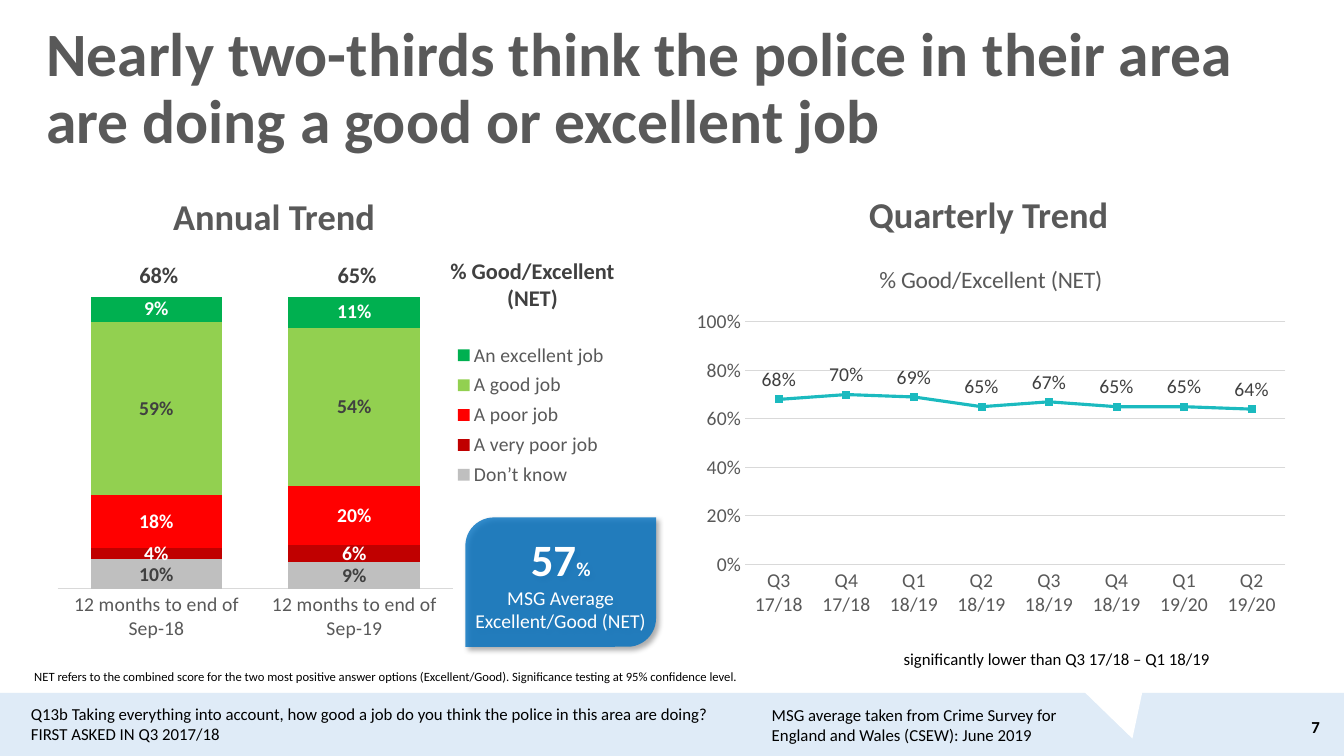
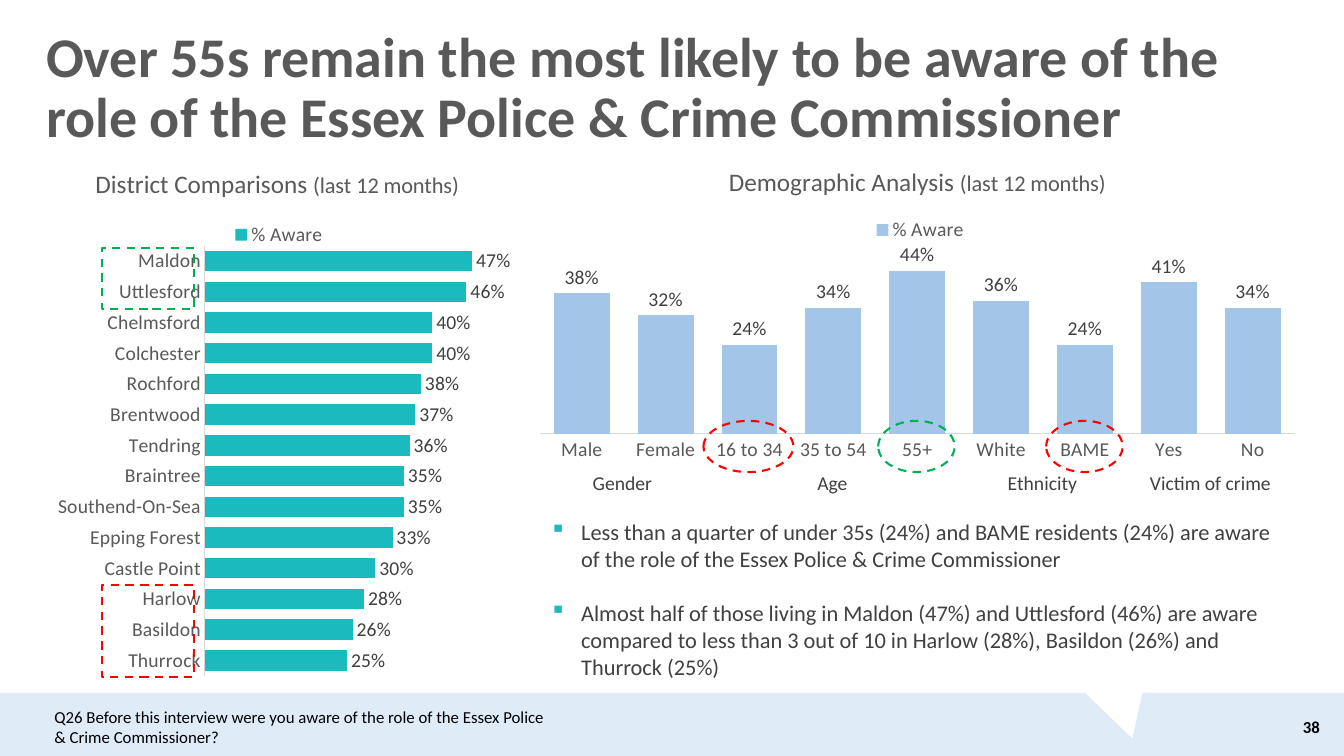
from lxml.etree import SubElement
from pptx import Presentation
from pptx.chart.data import CategoryChartData
from pptx.dml.color import RGBColor
from pptx.enum.chart import XL_CHART_TYPE as KIND
from pptx.enum.chart import XL_LABEL_POSITION as SPOT
from pptx.enum.chart import XL_LEGEND_POSITION as SIDE
from pptx.enum.chart import XL_MARKER_STYLE, XL_TICK_MARK
from pptx.enum.dml import MSO_LINE
from pptx.enum.shapes import MSO_SHAPE as FORM
from pptx.enum.text import MSO_ANCHOR, MSO_AUTO_SIZE, PP_ALIGN
from pptx.oxml.ns import qn
from pptx.util import Emu, Inches, Pt

COLS, ROWS = 160, 90
CELL = Inches(1) // 12
FACE = "Calibri"
BLACK = RGBColor(0x00, 0x00, 0x00)
WHITE = RGBColor(0xFF, 0xFF, 0xFF)
SLATE = RGBColor(0x59, 0x59, 0x59)
DARK = RGBColor(0x40, 0x40, 0x40)
RULE = RGBColor(0xD9, 0xD9, 0xD9)
SILVER = RGBColor(0xBF, 0xBF, 0xBF)
PALE = RGBColor(0xDF, 0xEB, 0xF7)
BLUE = RGBColor(0x00, 0x70, 0xC0)
SKY = RGBColor(0xA2, 0xC5, 0xE8)
TEAL = RGBColor(0x1B, 0xBA, 0xBF)
GREEN = RGBColor(0x00, 0xB0, 0x50)
LIME = RGBColor(0x92, 0xD0, 0x50)
RED = RGBColor(0xFF, 0x00, 0x00)
MAROON = RGBColor(0xC0, 0x00, 0x00)
LEFT, MID, RIGHT = PP_ALIGN.LEFT, PP_ALIGN.CENTER, PP_ALIGN.RIGHT


def grid(*cells):
    """Turn grid columns and rows into lengths."""
    return [Emu(round(n * CELL)) for n in cells]


def paint(font, size=14, color=SLATE, bold=False):
    """Set face, size, colour and weight of a font."""
    font.name, font.size, font.bold = FACE, Pt(size), bold
    font.color.rgb = color


def write(frame, *lines, align=LEFT, space=None, after=0, bullet=None, **look):
    """Fill a frame with lines, each a string or a list of (text, look) runs."""
    for n, line in enumerate(lines):
        para = frame.add_paragraph() if n else frame.paragraphs[0]
        para.alignment, para.line_spacing = align, space
        if after and n < len(lines) - 1:
            para.space_after = Pt(after)
        if bullet:
            props = para._p.get_or_add_pPr()
            props.set("marL", str(Inches(0.31)))
            props.set("indent", str(-Inches(0.31)))
            tint = SubElement(props, qn("a:buClr"))
            SubElement(tint, qn("a:srgbClr"), val=str(bullet))
            SubElement(props, qn("a:buChar"), char="▪")
        for text, extra in [(line, {})] if isinstance(line, str) else line:
            run = para.add_run()
            run.text = text
            paint(run.font, **{**look, **extra})


def label(slide, box, *lines, anchor=MSO_ANCHOR.TOP, **look):
    """Add a wrapped text box."""
    frame = slide.shapes.add_textbox(*grid(*box)).text_frame
    frame.word_wrap, frame.vertical_anchor = True, anchor
    write(frame, *lines, **look)


def shape(slide, form, box, fill=None, edge=None):
    """Add a preset shape with a plain fill or a dashed edge."""
    item = slide.shapes.add_shape(form, *grid(*box))
    item.shadow.inherit = False
    if fill is None:
        item.fill.background()
    else:
        item.fill.solid()
        item.fill.fore_color.rgb = fill
    if edge is None:
        item.line.fill.background()
    else:
        item.line.color.rgb, item.line.width = edge, Pt(1.5)
        item.line.dash_style = MSO_LINE.DASH
    return item


def base(deck):
    """Put the footer band and its notch on the title-only layout."""
    layout = deck.slide_layouts[5]
    slide = deck.slides.add_slide(layout)
    band = shape(slide, FORM.RECTANGLE, (0, 82.5, COLS, 7.5), PALE)
    notch = shape(slide, FORM.ISOSCELES_TRIANGLE, (129, 79.8, 9.2, 8.3), WHITE)
    notch.rotation = 163.1
    for n, item in enumerate((band, notch)):
        item.element.xpath("./p:nvSpPr/p:cNvPr")[0].set("id", str(20 + n))
        layout.shapes.element.insert(2 + n, item.element)
    return slide


def head(slide, text, number, box, size):
    """Format the title and add the page number."""
    title = slide.shapes.title
    title.left, title.top, title.width, title.height = grid(*box)
    frame = title.text_frame
    frame.auto_size, frame.word_wrap = MSO_AUTO_SIZE.NONE, True
    frame.vertical_anchor = MSO_ANCHOR.MIDDLE
    write(frame, text, space=0.9, size=size, bold=True)
    label(slide, (151.4, 84.1, 6.9, 4.8), number, anchor=MSO_ANCHOR.MIDDLE,
          align=RIGHT, size=12, color=BLACK, bold=True)


def table(slide, left, top, high, widths, texts, **look):
    """Add a one-row table of centred captions."""
    box = grid(left, top, sum(widths), high)
    body = slide.shapes.add_table(1, len(widths), *box).table
    body.first_row = body.horz_banding = False
    for n, (wide, text) in enumerate(zip(widths, texts)):
        body.columns[n].width = grid(wide)[0]
        cell = body.cell(0, n)
        cell.fill.background()
        cell.vertical_anchor = MSO_ANCHOR.MIDDLE
        write(cell.text_frame, text, align=MID, **look)


def place(node, spots, inner=False):
    """Give a plot area or legend a manual layout in shares of the chart."""
    for old in node.findall(qn("c:layout")):
        node.remove(old)
    layout = node.makeelement(qn("c:layout"))
    node.insert(len(node.findall(qn("c:legendPos"))), layout)
    manual = SubElement(layout, qn("c:manualLayout"))
    if inner:
        SubElement(manual, qn("c:layoutTarget"), val="inner")
    for key in "xy":
        SubElement(manual, qn(f"c:{key}Mode"), val="edge")
    for key, spot in zip("xywh", spots):
        SubElement(manual, qn(f"c:{key}"), val=str(spot))


def graph(slide, kind, box, cats, rows, plot, top, spot,
          title=None, legend=None, side=SIDE.TOP, scale=False):
    """Add a chart; rows hold name, percentages, fill, label colour, bold."""
    data = CategoryChartData(number_format="0%")
    data.categories = cats
    for name, vals, *_ in rows:
        data.add_series(name, [val / 100 for val in vals])
    chart = slide.shapes.add_chart(kind, *grid(*box), data).chart
    paint(chart.font, color=BLACK)
    chart.has_title = bool(title)
    if title:
        write(chart.chart_title.text_frame, title, align=MID, size=16)
    chart.has_legend = bool(legend)
    if legend:
        chart.legend.position = side
        chart.legend.include_in_layout = False
        paint(chart.legend.font)
        place(chart.legend._element, legend)
    area = chart.plots[0]
    area.vary_by_categories = False
    place(chart._chartSpace.chart.plotArea, plot, inner=True)
    cat, val = chart.category_axis, chart.value_axis
    for axis in (cat, val):
        axis.major_tick_mark = axis.minor_tick_mark = XL_TICK_MARK.NONE
        paint(axis.tick_labels.font)
    cat.format.line.color.rgb, cat.format.line.width = RULE, Pt(0.75)
    cat.reverse_order = kind == KIND.BAR_CLUSTERED
    val.minimum_scale, val.maximum_scale = 0, top
    val.visible = val.has_major_gridlines = scale
    if scale:
        val.major_unit = 0.2
        val.tick_labels.number_format = "0%"
        val.tick_labels.number_format_is_linked = False
        val.format.line.fill.background()
        rule = val.major_gridlines.format.line
        rule.color.rgb, rule.width = RULE, Pt(0.75)
    if kind != KIND.LINE_MARKERS:
        area.gap_width = 50
    for series, (_, _, fill, color, bold) in zip(area.series, rows):
        fills = [series.format.fill]
        if kind == KIND.LINE_MARKERS:
            series.smooth = False
            series.format.line.color.rgb = fill
            series.format.line.width = Pt(2.25)
            mark = series.marker
            mark.style, mark.size = XL_MARKER_STYLE.SQUARE, 5
            mark.format.line.color.rgb = fill
            fills = [mark.format.fill]
        for part in fills:
            part.solid()
            part.fore_color.rgb = fill
        tags = series.data_labels
        tags.show_value, tags.position = True, spot
        tags.number_format, tags.number_format_is_linked = "0%", False
        paint(tags.font, color=color, bold=bold)


def badge(slide, box):
    """Add the shaded badge with the group average."""
    item = shape(slide, FORM.ROUND_2_DIAG_RECTANGLE, box, BLUE)
    item.adjustments[0], item.adjustments[1] = 0.22, 0
    SubElement(item.element.find(".//" + qn("a:srgbClr")), qn("a:alpha"), val="80000")
    glow = SubElement(item.element.spPr.find(qn("a:effectLst")), qn("a:outerShdw"),
                      blurRad=str(Pt(4)), dist=str(Pt(3)), dir="2700000")
    tint = SubElement(glow, qn("a:srgbClr"), val=str(BLACK))
    SubElement(tint, qn("a:alpha"), val="40000")
    frame = item.text_frame
    frame.margin_left = frame.margin_right = frame.margin_top = frame.margin_bottom = 0
    frame.vertical_anchor = MSO_ANCHOR.MIDDLE
    write(frame, [("57", {"size": 32, "bold": True}), ("%", {"bold": True})],
          "MSG Average", "Excellent/Good (NET)", align=MID, color=WHITE)


def trends(slide):
    """Build the slide on annual and quarterly trends."""
    head(slide, "Nearly two-thirds think the police in their area are doing "
         "a good or excellent job", "7", (4.3, 2, 151.6, 17.4), 44)
    note = {"size": 12, "color": BLACK}
    label(slide, (2.5, 83.2, 84.4, 6),
          "Q13b Taking everything into account, how good a job do you think "
          "the police in this area are doing?", "FIRST ASKED IN Q3 2017/18", **note)
    label(slide, (90.7, 83.3, 40.6, 6), "MSG average taken from Crime Survey for "
          "England and Wales (CSEW): June 2019", **note)
    label(slide, (2.9, 79, 89, 3),
          "NET refers to the combined score for the two most positive answer options "
          "(Excellent/Good). Significance testing at 95% confidence level.",
          size=9, color=BLACK)
    label(slide, (97.2, 76.6, 57.2, 3.6),
          "significantly lower than Q3 17/18 – Q1 18/19", align=MID, **note)
    for text, box, space in (("Quarterly Trend", (80.9, 23.2, 73.6, 5.5), 0.8),
                             ("Annual Trend", (9.8, 21.4, 45.7, 9.2), 0.9)):
        label(slide, box, text, anchor=MSO_ANCHOR.MIDDLE, align=MID,
              space=space, size=26, bold=True)
    name = "% Good/Excellent (NET)"
    terms = ("Q3\n17/18", "Q4\n17/18", "Q1\n18/19", "Q2\n18/19",
             "Q3\n18/19", "Q4\n18/19", "Q1\n19/20", "Q2\n19/20")
    graph(slide, KIND.LINE_MARKERS, (81.4, 29.3, 73.1, 45.1), terms,
          [(name, (68, 70, 69, 65, 67, 65, 65, 64), TEAL, DARK, False)],
          (0.1, 0.2, 0.88, 0.64), 1, SPOT.ABOVE, title=[(name, {"size": 16.8})],
          scale=True)
    graph(slide, KIND.COLUMN_STACKED_100, (4.8, 29.2, 68.3, 49.9),
          ("12 months to end of Sep-18", "12 months to end of Sep-19"),
          [("Don’t know", (10, 9), SILVER, DARK, True),
           ("A very poor job", (4, 6), MAROON, WHITE, True),
           ("A poor job", (18, 20), RED, WHITE, True),
           ("A good job", (59, 54), LIME, DARK, True),
           ("An excellent job", (9, 11), GREEN, WHITE, True)],
          (0.03, 0.12, 0.69, 0.7), 1, SPOT.CENTER,
          legend=(0.72, 0.22, 0.27, 0.37), side=SIDE.RIGHT)
    bold = {"size": 16, "color": DARK, "bold": True}
    table(slide, 7.1, 30.4, 4.9, (23.6, 23.6), ("68%", "65%"), **bold)
    label(slide, (52.3, 30, 22.2, 7.7), "% Good/Excellent", "(NET)", align=MID, **bold)
    badge(slide, (55.4, 61.6, 22.7, 15.4))


def aware(slide):
    """Build the slide on awareness by district and group."""
    head(slide, "Over 55s remain the most likely to be aware of the role of the "
         "Essex Police & Crime Commissioner", "38", (4.3, 1.4, 151.6, 18.5), 40)
    groups = ("Male", "Female", "16 to 34", "35 to 54", "55+",
              "White", "BAME", "Yes", "No")
    towns = ("Maldon", "Uttlesford", "Chelmsford", "Colchester", "Rochford",
             "Brentwood", "Tendring", "Braintree", "Southend-On-Sea",
             "Epping Forest", "Castle Point", "Harlow", "Basildon", "Thurrock")
    shares = (47, 46, 40, 40, 38, 37, 36, 35, 35, 33, 30, 28, 26, 25)
    span = ("(last 12 months)", {"size": 16})
    graph(slide, KIND.COLUMN_CLUSTERED, (62.4, 17.9, 93.6, 37.9), groups,
          [("% Aware", (38, 32, 24, 34, 44, 36, 24, 41, 34), SKY, DARK, False)],
          (0.02, 0.31, 0.96, 0.58), 0.5, SPOT.OUTSIDE_END,
          title=[("Demographic Analysis ", {"size": 18}), span], legend=(0.44, 0.2))
    graph(slide, KIND.BAR_CLUSTERED, (4.3, 17.6, 57.4, 64.8), towns,
          [("% Aware", shares, TEAL, DARK, False)],
          (0.35, 0.18, 0.59, 0.79), 0.5, SPOT.OUTSIDE_END,
          title=[("District Comparisons ", {"size": 18}), span], legend=(0.4, 0.13))
    left, step = 64.1, 10
    table(slide, left, 55.2, 4.7, [step * n for n in (2, 3, 2, 2)],
          ("Gender", "Age", "Ethnicity", "Victim of crime"), color=DARK)
    label(slide, (64.3, 61.1, 89.5, 20.6),
          "Less than a quarter of under 35s (24%) and BAME residents (24%) are aware "
          "of the role of the Essex Police & Crime Commissioner",
          "Almost half of those living in Maldon (47%) and Uttlesford (46%) are aware "
          "compared to less than 3 out of 10 in Harlow (28%), Basildon (26%) and "
          "Thurrock (25%)", bullet=TEAL, after=19.5, size=16, color=DARK)
    label(slide, (5.3, 83.5, 61.9, 6), "Q26 Before this interview were you aware of "
          "the role of the Essex Police & Crime Commissioner?", size=12, color=BLACK)
    for town, count, edge in (("Maldon", 2, GREEN), ("Harlow", 3, RED)):
        top = 29.5 + 3.65 * towns.index(town)
        shape(slide, FORM.RECTANGLE, (12.1, top, 11, 3.65 * count), edge=edge)
    for group, wide, edge in (("16 to 34", 10.7, RED), ("55+", 9.1, GREEN),
                              ("BAME", 9.1, RED)):
        mid = left + step * (groups.index(group) + 0.5)
        shape(slide, FORM.OVAL, (mid - wide / 2, 50.1, wide, 6.1), edge=edge)


def main():
    """Build and save the deck."""
    deck = Presentation()
    deck.slide_width, deck.slide_height = grid(COLS, ROWS)
    trends(base(deck))
    aware(deck.slides.add_slide(deck.slide_layouts[5]))
    deck.save("out.pptx")


if __name__ == "__main__":
    main()
